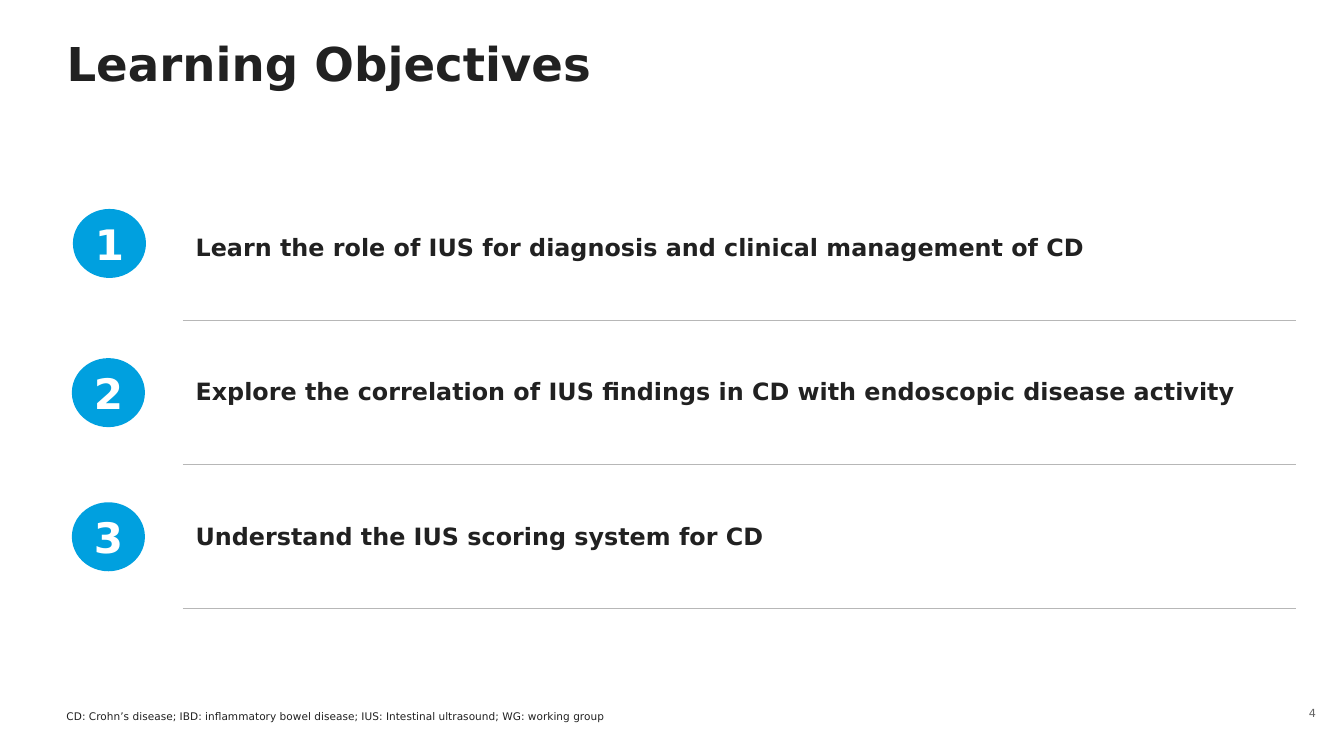
import pptx
import pptx.util
import pptx.dml.color
import pptx.enum.shapes
import pptx.enum.text
import pptx.oxml
import pptx.oxml.ns

Inches = pptx.util.Inches
Pt = pptx.util.Pt
ANCHOR = pptx.enum.text.MSO_ANCHOR
ALIGN = pptx.enum.text.PP_ALIGN

COLORS = {"ink": "212121", "accent": "00A0DF", "rule": "B7B7B7",
          "muted": "646464", "white": "FFFFFF"}
FORMATS = {
    "title": {"size": Pt(33.3), "bold": True},
    "objective": {"size": Pt(17), "bold": True},
    "number": {"size": Pt(30), "bold": True},
    "page": {"size": Pt(8), "bold": False},
    "footnote": {"size": Pt(7.5), "bold": False},
}
OBJECTIVES = [
    ("Learn the role of IUS for diagnosis and clinical management of CD", 0.74, 2.09),
    ("Explore the correlation of IUS findings in CD with endoscopic disease activity", 0.73, 3.57),
    ("Understand the IUS scoring system for CD", 0.73, 5),
]


def rgb(name):
    return pptx.dml.color.RGBColor.from_string(COLORS[name])


def write(frame, text, role, color, anchor, align=ALIGN.LEFT, margins=(0, 0, 0, 0)):
    left, top, right, bottom = map(Inches, margins)
    layout = {"text": text, "word_wrap": True, "vertical_anchor": anchor,
              "auto_size": pptx.enum.text.MSO_AUTO_SIZE.NONE,
              "margin_left": left, "margin_top": top,
              "margin_right": right, "margin_bottom": bottom}
    for attribute, value in layout.items():
        setattr(frame, attribute, value)
    paragraph = frame.paragraphs[0]
    paragraph.alignment = align
    paragraph.space_before = Pt(0)
    font = paragraph.runs[0].font
    font.name = "DejaVu Sans"
    font.color.rgb = rgb(color)
    for attribute, value in FORMATS[role].items():
        setattr(font, attribute, value)


deck = pptx.Presentation()
deck.slide_width = Inches(13.33)
deck.slide_height = Inches(7.5)
slide = deck.slides.add_slide(deck.slide_layouts[5])

title = slide.shapes.title
title_place = {"left": 0.66, "top": 0.41, "width": 11.1, "height": 0.5}
for attribute, value in title_place.items():
    setattr(title, attribute, Inches(value))
write(title.text_frame, "Learning Objectives", "title", "ink", ANCHOR.MIDDLE)
title.text_frame.paragraphs[0].line_spacing = 0.9

objectives = slide.shapes.add_table(
    len(OBJECTIVES), 1, Inches(1.82), Inches(1.75), Inches(11.03), Inches(4.29)).table
objectives.first_row = False
objectives.horz_banding = False

for index, (objective, badge_left, badge_top) in enumerate(OBJECTIVES):
    objectives.rows[index].height = Inches(1.43)
    cell = objectives.cell(index, 0)
    write(cell.text_frame, objective, "objective", "ink", ANCHOR.MIDDLE)
    cell_layout = {"vertical_anchor": ANCHOR.MIDDLE,
                   "margin_left": Inches(0.12), "margin_right": Inches(0.06),
                   "margin_top": Inches(0.04), "margin_bottom": Inches(0.04)}
    for attribute, value in cell_layout.items():
        setattr(cell, attribute, value)
    cell_properties = cell._tc.get_or_add_tcPr()
    for edge in ["lnT", "lnB"] if index else ["lnB"]:
        cell_properties.append(pptx.oxml.parse_xml(
            f'<a:{edge} {pptx.oxml.ns.nsdecls("a")} w="{Pt(1)}"><a:solidFill>'
            f'<a:srgbClr val="{COLORS["rule"]}"/></a:solidFill></a:{edge}>'))
    cell.fill.background()

    badge = slide.shapes.add_shape(
        pptx.enum.shapes.MSO_SHAPE.OVAL,
        Inches(badge_left), Inches(badge_top), Inches(0.69), Inches(0.65))
    badge.shadow.inherit = False
    badge.fill.solid()
    badge.fill.fore_color.rgb = rgb("accent")
    badge.line.color.rgb = rgb("accent")
    badge.line.width = Pt(2.5)
    write(badge.text_frame, str(index + 1), "number", "white", ANCHOR.MIDDLE, ALIGN.CENTER)
    badge.text_frame.word_wrap = False

page = slide.shapes.add_textbox(Inches(12.73), Inches(6.89), Inches(0.42), Inches(0.36))
write(page.text_frame, "4", "page", "muted", ANCHOR.MIDDLE, ALIGN.RIGHT, (0.1, 0.05, 0.1, 0.05))

footnote = slide.shapes.add_textbox(Inches(0.66), Inches(6.87), Inches(9.17), Inches(0.3))
write(footnote.text_frame,
      "CD: Crohn’s disease; IBD: inflammatory bowel disease; IUS: Intestinal ultrasound; WG: working group",
      "footnote", "ink", ANCHOR.BOTTOM)

deck.save("out.pptx")
